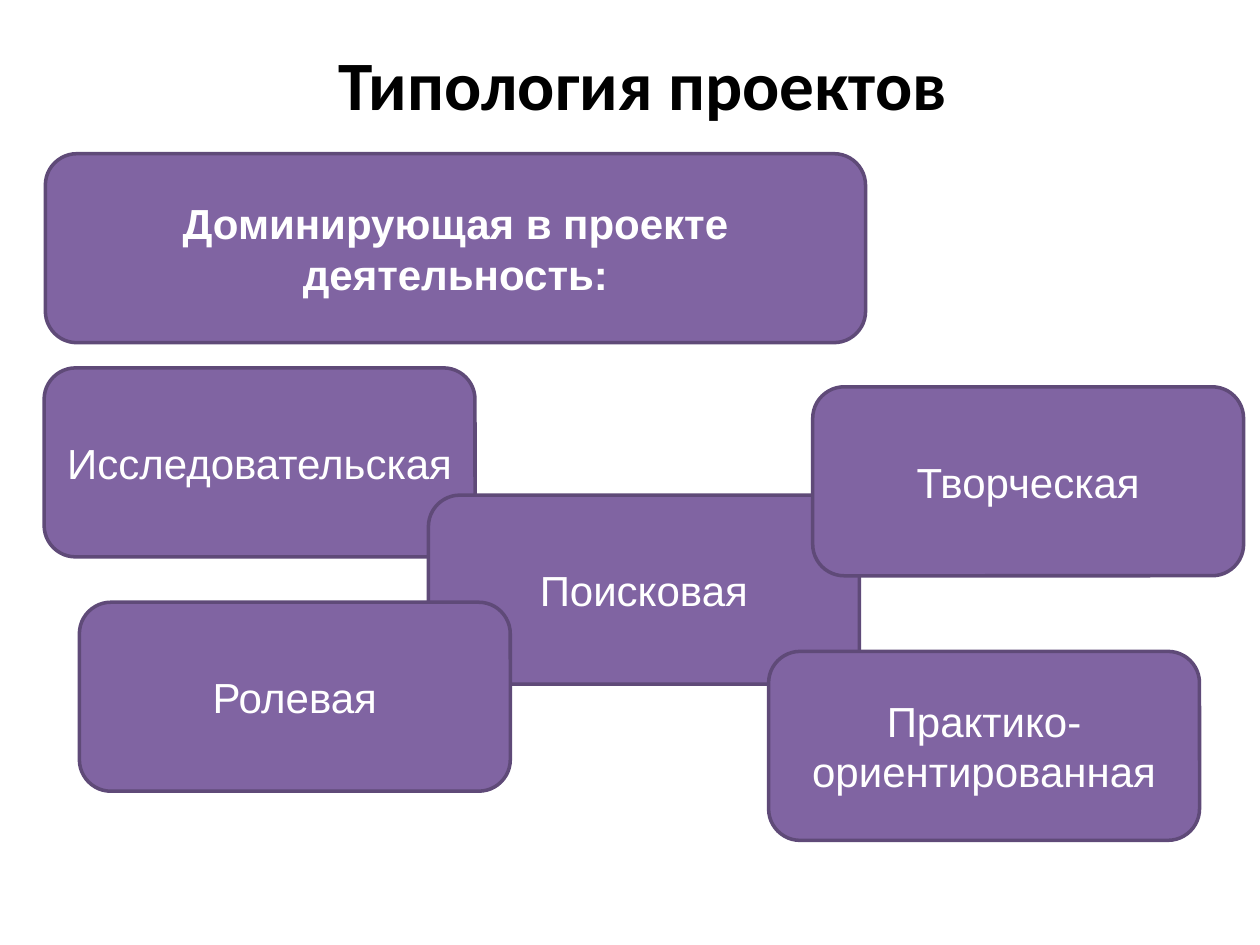
import pptx
import pptx.util
import pptx.dml.color
import pptx.enum.shapes
import pptx.enum.text

Inches, Pt = pptx.util.Inches, pptx.util.Pt

COLORS = {"fill": "8064A2", "line": "5F4A78", "light": "FFFFFF", "dark": "000000"}

TITLE = "Типология проектов"
HEADING = "Доминирующая в проекте деятельность:"
# activity, left, top; listed from back to front
ACTIVITIES = [
    ("Исследовательская", 0.35, 2.92),
    ("Поисковая", 3.4, 3.93),
    ("Творческая", 6.45, 3.07),
    ("Ролевая", 0.63, 4.78),
    ("Практико-ориентированная", 6.1, 5.17),
]
HEADING_W, ACTIVITY_W, BOX_H = 6.51, 3.42, 1.5


def rgb(name):
    return pptx.dml.color.RGBColor.from_string(COLORS[name])


def set_text(s, text, font, size, color, bold):
    tf = s.text_frame
    tf.word_wrap = True
    tf.vertical_anchor = pptx.enum.text.MSO_ANCHOR.MIDDLE
    p = tf.paragraphs[0]
    p.text = text
    p.alignment = pptx.enum.text.PP_ALIGN.CENTER
    p.font.name, p.font.size, p.font.bold = font, Pt(size), bold
    p.font.color.rgb = rgb(color)


def add_box(slide, text, left, top, width, bold=False):
    s = slide.shapes.add_shape(
        pptx.enum.shapes.MSO_SHAPE.ROUNDED_RECTANGLE,
        Inches(left), Inches(top), Inches(width), Inches(BOX_H))
    s.shadow.inherit = False
    s.fill.solid()
    s.fill.fore_color.rgb = rgb("fill")
    s.line.color.rgb = rgb("line")
    s.line.width = Pt(2)
    set_text(s, text, "Arial", 24, "light", bold)


def main():
    prs = pptx.Presentation()
    prs.slide_width, prs.slide_height = Inches(10), Inches(7.5)
    slide = prs.slides.add_slide(prs.slide_layouts[6])

    title = slide.shapes.add_textbox(Inches(1.14), Inches(0.29), Inches(7.92), Inches(0.73))
    set_text(title, TITLE, "Calibri", 39.6, "dark", True)

    for text, left, top in ACTIVITIES:
        add_box(slide, text, left, top, ACTIVITY_W)
    add_box(slide, HEADING, 0.36, 1.22, HEADING_W, bold=True)

    prs.save("out.pptx")


if __name__ == "__main__":
    main()
